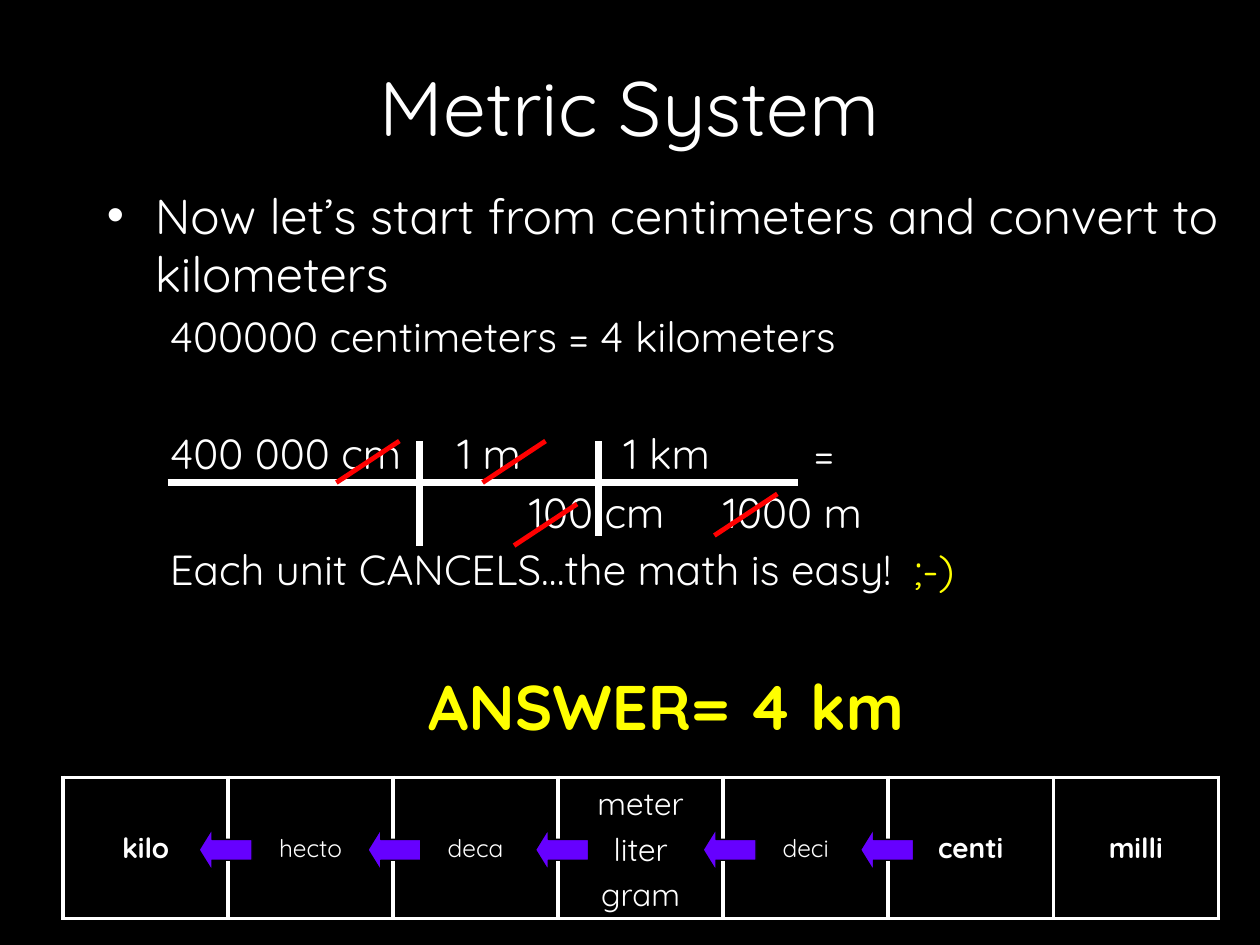
import pptx
import pptx.util
import pptx.dml.color
import pptx.enum.shapes
import pptx.enum.text
import pptx.oxml.ns
from lxml import etree

Inches, Pt = pptx.util.Inches, pptx.util.Pt
RGB = pptx.dml.color.RGBColor.from_string
ALIGN = pptx.enum.text.PP_ALIGN
MIDDLE = pptx.enum.text.MSO_ANCHOR.MIDDLE
qn = pptx.oxml.ns.qn

THEME = {
    "font": "Quicksand", "background": "000000", "text": "FFFFFF",
    "accent": "FFFF00", "arrow": "6600FF", "strike": "FF0000",
    "title": 44, "lead": 28, "work": 24, "answer": 36,
    "base_unit": 18, "key_unit": 16, "unit": 14,
}

# Content
TITLE = "Metric System"
LEAD = "Now let’s start from centimeters and convert to kilometers"
# Runs (text, size, colour, bold), left indent, space before in points;
# the large spaces leave room for the fraction and above the answer
WORK_LINES = [
    ([("400000 centimeters = 4 kilometers", "work", "text", False)], 0.5, 4.5),
    ([("Each unit CANCELS…the math is easy!  ", "work", "text", False),
      (";-)", "work", "accent", False)], 0.5, 104.5),
    ([("ANSWER= 4 km", "answer", "accent", True)], 2.55, 42),
]
# Row top, then each term with its left edge and width
FRACTION_ROWS = [
    (3.39, [("400 000 cm", 1.35, 1.9), ("1 m", 3.63, 0.6),
            ("1 km", 4.95, 0.8), ("=", 6.46, 0.3)]),
    (3.86, [("100 cm", 4.2, 1.2), ("1000 m", 5.74, 1.2)]),
]
TERM_HEIGHT = 0.42
FRACTION_BARS = [(1.33, 3.83, 6.33, 3.83), (3.33, 3.5, 3.33, 4.33),
                 (4.75, 3.5, 4.75, 4.25)]
STRIKE_STARTS = [(3.17, 3.5), (4.58, 4), (4.33, 3.5), (6.17, 3.92)]
STRIKE_WIDTH, STRIKE_HEIGHT = 0.5, 0.33
PREFIXES = [
    (["kilo"], "key_unit", True), (["hecto"], "unit", False),
    (["deca"], "unit", False), (["meter", "liter", "gram"], "base_unit", False),
    (["deci"], "unit", False), (["centi"], "key_unit", True),
    (["milli"], "key_unit", True),
]
ARROW_LEFTS = [1.58, 2.92, 4.25, 5.58, 6.83]


def add_run(paragraph, text, size, colour="text", bold=False):
    run = paragraph.add_run()
    run.text = text
    run.font.name = THEME["font"]
    run.font.size = Pt(THEME[size])
    run.font.bold = bold
    run.font.color.rgb = RGB(THEME[colour])


def set_indent(paragraph, left, first=0, bullet=None):
    properties = paragraph._p.get_or_add_pPr()
    properties.set("marL", str(Inches(left)))
    properties.set("indent", str(Inches(first)))
    if bullet:
        etree.SubElement(properties, qn("a:buFont")).set("typeface", "Arial")
        etree.SubElement(properties, qn("a:buChar")).set("char", bullet)
    else:
        etree.SubElement(properties, qn("a:buNone"))


def add_term(slide, text, left, top, width):
    frame = slide.shapes.add_textbox(
        *map(Inches, (left, top, width, TERM_HEIGHT))).text_frame
    frame.margin_left = frame.margin_right = 0
    frame.margin_top = frame.margin_bottom = 0
    frame.word_wrap = False
    add_run(frame.paragraphs[0], text, "work")


def add_line(slide, ends, colour, width):
    line = slide.shapes.add_connector(
        pptx.enum.shapes.MSO_CONNECTOR.STRAIGHT, *map(Inches, ends))
    line.line.color.rgb = RGB(THEME[colour])
    line.line.width = Pt(width)
    etree.SubElement(line._element.spPr, qn("a:effectLst"))


def border_cell(cell):
    properties = cell._tc.get_or_add_tcPr()
    for position, side in enumerate(("lnL", "lnR", "lnT", "lnB")):
        border = etree.Element(qn("a:" + side), w=str(Pt(2.25)))
        fill = etree.SubElement(border, qn("a:solidFill"))
        etree.SubElement(fill, qn("a:srgbClr")).set("val", THEME["text"])
        properties.insert(position, border)


def main():
    deck = pptx.Presentation()
    deck.slide_width, deck.slide_height = Inches(10), Inches(7.5)
    slide = deck.slides.add_slide(deck.slide_layouts.get_by_name("Title Only"))
    slide.background.fill.solid()
    slide.background.fill.fore_color.rgb = RGB(THEME["background"])

    # Title
    title = slide.shapes.title
    title.left, title.top = Inches(0.75), Inches(0.25)
    title.width, title.height = Inches(8.5), Inches(1.17)
    title.text_frame.vertical_anchor = MIDDLE
    heading = title.text_frame.paragraphs[0]
    heading.alignment = ALIGN.CENTER
    add_run(heading, TITLE, "title")

    # Explanation and answer
    body = slide.shapes.add_textbox(
        Inches(0.75), Inches(1.42), Inches(9.25), Inches(4.58)).text_frame
    body.word_wrap = True
    lead = body.paragraphs[0]
    set_indent(lead, 0.38, -0.38, "•")
    add_run(lead, LEAD, "lead")
    for runs, left, space in WORK_LINES:
        step = body.add_paragraph()
        step.level = 1
        step.space_before = Pt(space)
        set_indent(step, left)
        for run in runs:
            add_run(step, *run)

    # Terms of the conversion fraction
    for top, terms in FRACTION_ROWS:
        for text, left, width in terms:
            add_term(slide, text, left, top, width)

    # Prefix table
    prefix_table = slide.shapes.add_table(
        1, len(PREFIXES), Inches(0.5), Inches(6.17), Inches(9.17), Inches(1.12)).table
    for cell, (names, size, bold) in zip(prefix_table.rows[0].cells, PREFIXES):
        cell.fill.background()
        cell.vertical_anchor = MIDDLE
        border_cell(cell)
        for index, name in enumerate(names):
            frame = cell.text_frame
            entry = frame.add_paragraph() if index else frame.paragraphs[0]
            entry.alignment = ALIGN.CENTER
            entry.space_before = Pt(0.2 * THEME[size])
            add_run(entry, name, size, bold=bold)

    # Arrows from centi to kilo
    for left in ARROW_LEFTS:
        arrow = slide.shapes.add_shape(
            pptx.enum.shapes.MSO_SHAPE.LEFT_ARROW,
            Inches(left), Inches(6.58), Inches(0.42), Inches(0.33))
        arrow.adjustments[1] = 0.31
        arrow.shadow.inherit = False
        arrow.fill.solid()
        arrow.fill.fore_color.rgb = RGB(THEME["arrow"])
        arrow.line.color.rgb = RGB(THEME["background"])
        arrow.line.width = Pt(0.75)

    # Fraction bars and cancelled units
    for ends in FRACTION_BARS:
        add_line(slide, ends, "text", 3.75)
    for x, y in STRIKE_STARTS:
        add_line(slide, (x, y, x - STRIKE_WIDTH, y + STRIKE_HEIGHT), "strike", 2.75)

    deck.save("out.pptx")


if __name__ == "__main__":
    main()
